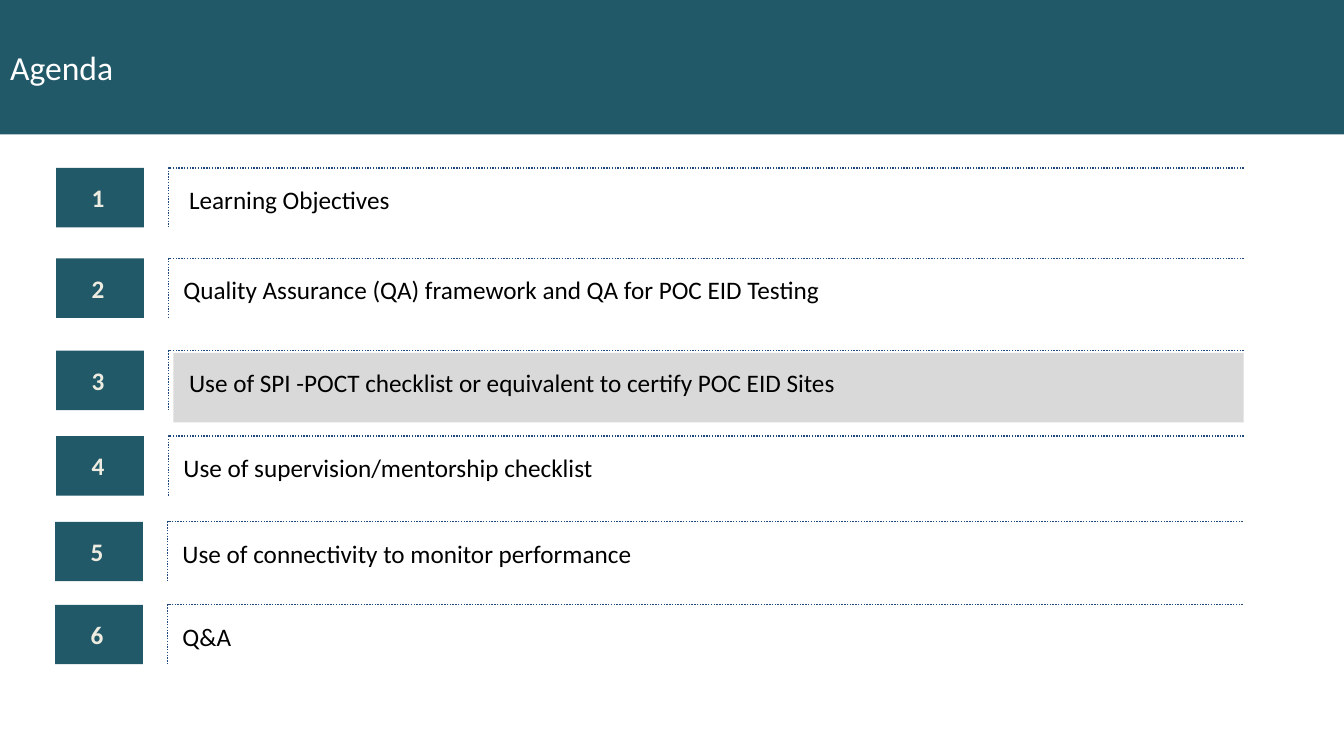
"""Build an agenda slide with six numbered rows, the third one highlighted."""
import pptx
import pptx.dml.color
import pptx.enum.dml
import pptx.enum.shapes
import pptx.enum.text
import pptx.util

Pt = pptx.util.Pt
RGBColor = pptx.dml.color.RGBColor
RECTANGLE = pptx.enum.shapes.MSO_SHAPE.RECTANGLE
MIDDLE = pptx.enum.text.MSO_ANCHOR.MIDDLE

TEAL = RGBColor(0x21, 0x59, 0x68)
NAVY = RGBColor(0x1F, 0x49, 0x7D)
CREAM = RGBColor(0xEE, 0xEC, 0xE1)
GREY = RGBColor(0xD9, 0xD9, 0xD9)
WHITE = RGBColor(0xFF, 0xFF, 0xFF)
BLACK = RGBColor(0x00, 0x00, 0x00)

ROW_HEIGHT = 42.5
AGENDA = [
    (40.2, 120, " Learning Objectives"),
    (40.2, 184.6, "Quality Assurance (QA) framework and QA for POC EID Testing"),
    (40.2, 250.5, " Use of SPI -POCT checklist or equivalent to certify POC EID Sites"),
    (40.2, 311.5, "Use of supervision/mentorship checklist"),
    (39.5, 372.7, "Use of connectivity to monitor performance"),
    (39.5, 432, "Q&A"),
]


def add_rectangle(shapes, left, top, width, height, color):
    shape = shapes.add_shape(RECTANGLE, Pt(left), Pt(top), Pt(width), Pt(height))
    shape.shadow.inherit = False
    shape.fill.solid()
    shape.fill.fore_color.rgb = color
    shape.line.fill.background()
    return shape


def format_text(paragraph, size, color, bold=False):
    for run in paragraph.runs:
        run.font.name = "Calibri"
        run.font.size = Pt(size)
        run.font.bold = bold
        run.font.color.rgb = color


presentation = pptx.Presentation()
presentation.slide_width = Pt(960)
presentation.slide_height = Pt(540)
slide = presentation.slides.add_slide(presentation.slide_layouts[5])

title = slide.shapes.title
title.left, title.top, title.width, title.height = Pt(0), Pt(0), Pt(960), Pt(96)
title.fill.solid()
title.fill.fore_color.rgb = TEAL
title.text_frame.text = "Agenda"
title.text_frame.vertical_anchor = MIDDLE
title.text_frame.paragraphs[0].alignment = pptx.enum.text.PP_ALIGN.LEFT
format_text(title.text_frame.paragraphs[0], 24, WHITE)

add_rectangle(slide.shapes, 123.8, 252, 764.6, 49.7, GREY)

for number, (left, top, topic) in enumerate(AGENDA, start=1):
    row = slide.shapes.add_group_shape()

    badge = add_rectangle(row.shapes, left, top, 62.6, ROW_HEIGHT, TEAL)
    badge.text_frame.margin_left = Pt(4.3)
    badge.text_frame.text = str(number)
    badge.text_frame.vertical_anchor = MIDDLE
    badge.text_frame.paragraphs[0].alignment = pptx.enum.text.PP_ALIGN.CENTER
    format_text(badge.text_frame.paragraphs[0], 18, CREAM, bold=True)

    label = row.shapes.add_textbox(Pt(left + 90.8), Pt(top + 13.2), Pt(780), Pt(20.9))
    frame = label.text_frame
    frame.word_wrap = True
    frame.margin_left = frame.margin_top = frame.margin_right = frame.margin_bottom = 0
    frame.text = topic
    paragraph = frame.paragraphs[0]
    paragraph.line_spacing = 0.95
    properties = paragraph._p.get_or_add_pPr()
    properties.set("marL", str(Pt(9.4)))
    properties.set("indent", str(-Pt(9.4)))
    format_text(paragraph, 18, BLACK)

    corner = left + 80.2
    builder = row.shapes.build_freeform(Pt(corner + 768), Pt(top))
    builder.add_line_segments(
        [(Pt(corner), Pt(top)), (Pt(corner), Pt(top + ROW_HEIGHT))], close=False
    )
    bracket = builder.convert_to_shape()
    bracket.shadow.inherit = False
    bracket.fill.background()
    bracket.line.color.rgb = NAVY
    bracket.line.width = Pt(1)
    bracket.line.dash_style = pptx.enum.dml.MSO_LINE.ROUND_DOT

presentation.save("out.pptx")
